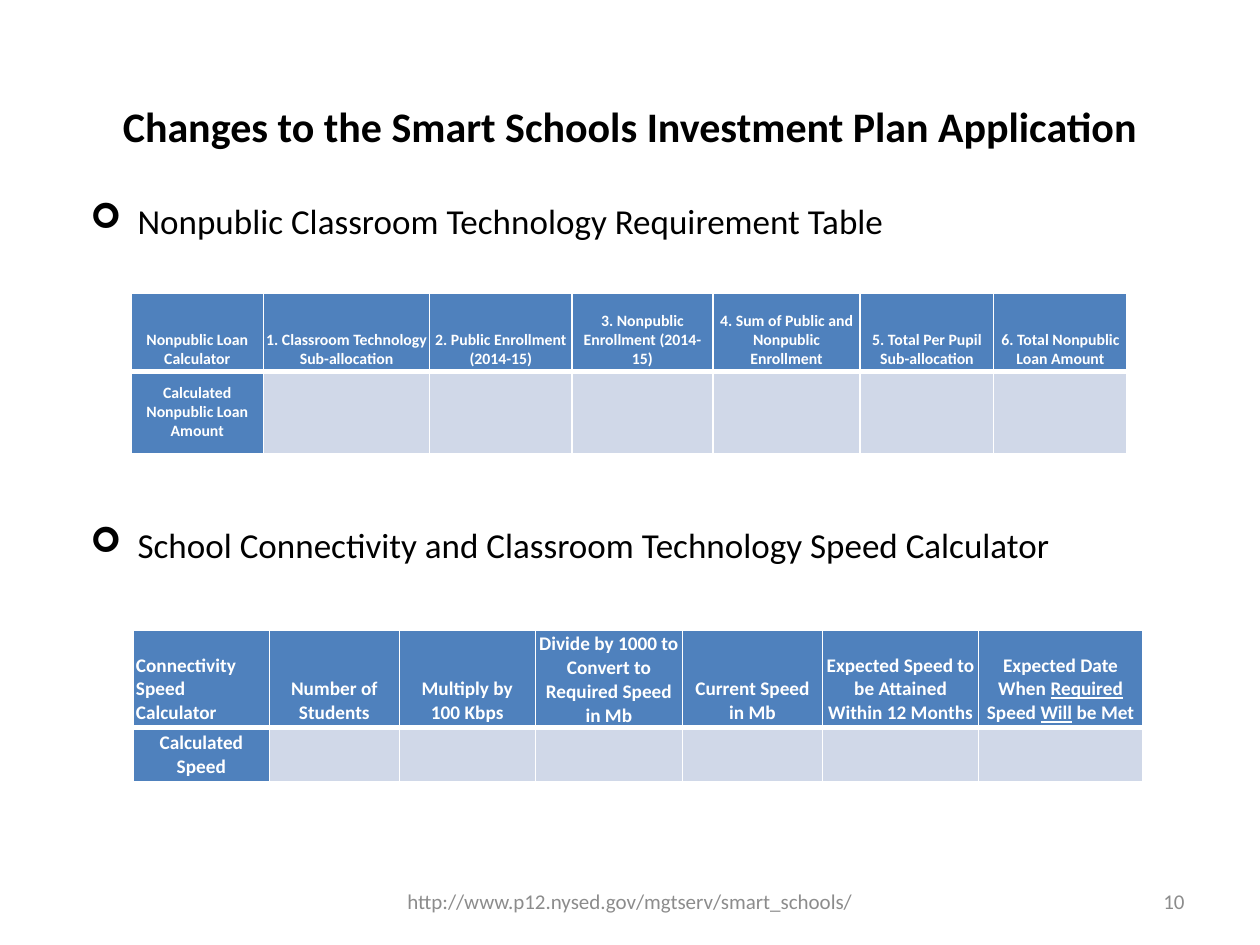
from lxml.etree import SubElement
from pptx import Presentation
from pptx.dml.color import RGBColor
from pptx.enum.text import MSO_ANCHOR, MSO_AUTO_SIZE, PP_ALIGN
from pptx.oxml.ns import qn
from pptx.util import Cm, Pt

FONT = "Calibri"
BLACK, WHITE, GREY = "000000", "FFFFFF", "8C8C8C"
BLUE, PALE_BLUE = "4F81BD", "D0D8E8"

LOAN_HEADINGS = [
    "Nonpublic Loan Calculator",
    "1. Classroom Technology Sub-allocation",
    "2. Public Enrollment (2014-15)",
    "3. Nonpublic Enrollment (2014-15)",
    "4. Sum of Public and Nonpublic Enrollment",
    "5. Total Per Pupil Sub-allocation",
    "6. Total Nonpublic Loan Amount",
]
# A line break starts a new paragraph; underscores enclose underlined words
SPEED_HEADINGS = [
    "Connectivity Speed Calculator",
    "Number of\nStudents",
    "Multiply by\n100 Kbps",
    "Divide by 1000 to Convert to Required Speed in Mb",
    "Current Speed\nin Mb",
    "Expected Speed to be Attained Within 12 Months",
    "Expected Date When _Required_ Speed _Will_ be Met",
]


def colour(value):
    return RGBColor.from_string(value)


def style(para, size, value, bold=False, align=PP_ALIGN.LEFT):
    para.alignment = align
    font = para.font
    font.name, font.size, font.bold = FONT, Pt(size), bold
    font.color.rgb = colour(value)


def place(shape, box):
    shape.left, shape.top, shape.width, shape.height = (Cm(n) for n in box)


def add_title(page, box, text):
    title = page.shapes.title
    place(title, box)
    frame = title.text_frame
    frame.text = text
    frame.auto_size = MSO_AUTO_SIZE.NONE
    frame.vertical_anchor = MSO_ANCHOR.MIDDLE
    style(frame.paragraphs[0], 24, BLACK, bold=True, align=PP_ALIGN.CENTER)


def add_list(page, box, items, gap):
    body = page.placeholders[1]
    place(body, box)
    frame = body.text_frame
    frame.text = "\n".join(items)
    frame.auto_size = MSO_AUTO_SIZE.NONE
    for index, para in enumerate(frame.paragraphs):
        para.space_before = Pt(gap if index else 0)
        props = para._p.get_or_add_pPr()
        props.set("marL", str(Cm(0.95)))
        props.set("indent", str(-Cm(0.95)))
        SubElement(props, qn("a:buFont"), typeface="Wingdings")
        SubElement(props, qn("a:buChar"), char="➢")
        style(para, 20, BLACK)


def add_borders(cell, **widths):
    props = cell._tc.get_or_add_tcPr()
    for side in "LRTB":
        line = SubElement(props, qn(f"a:ln{side}"), w=str(Pt(widths.get(side, 1))))
        fill = SubElement(line, qn("a:solidFill"))
        SubElement(fill, qn("a:srgbClr"), val=WHITE)


def fill_cell(cell, text, size, anchor, margin, align=PP_ALIGN.CENTER):
    cell.vertical_anchor = anchor
    cell.margin_left = cell.margin_right = Cm(margin)
    cell.margin_top = cell.margin_bottom = Cm(margin)
    frame = cell.text_frame
    for index, line in enumerate(text.split("\n")):
        para = frame.add_paragraph() if index else frame.paragraphs[0]
        style(para, size, WHITE, bold=True, align=align)
        for number, part in enumerate(line.split("_")):
            span = para.add_run()
            span.text = part
            if number % 2:
                span.font.underline = True


def add_calculator(page, left, top, widths, heights, headings, row_label, size,
                   corner_align=PP_ALIGN.CENTER):
    frame = page.shapes.add_table(2, len(widths), Cm(left), Cm(top),
                                  Cm(sum(widths)), Cm(sum(heights)))
    table = frame.table
    for row, height in zip(table.rows, heights):
        row.height = Cm(height)
    for index, (width, heading) in enumerate(zip(widths, headings)):
        table.columns[index].width = Cm(width)
        head, value = table.cell(0, index), table.cell(1, index)
        # Thick rule between the heading row and the values
        add_borders(head, B=3)
        add_borders(value, T=3)
        for cell, is_label in ((head, True), (value, index == 0)):
            cell.fill.solid()
            cell.fill.fore_color.rgb = colour(BLUE if is_label else PALE_BLUE)
        align = PP_ALIGN.CENTER if index else corner_align
        fill_cell(head, heading, size, MSO_ANCHOR.BOTTOM, 0.05, align)
    fill_cell(table.cell(1, 0), row_label, size, MSO_ANCHOR.MIDDLE, 0.08)


def add_footer_text(page, box, text, align):
    shape = page.shapes.add_textbox(*(Cm(n) for n in box))
    frame = shape.text_frame
    frame.text = text
    frame.word_wrap = True
    frame.vertical_anchor = MSO_ANCHOR.MIDDLE
    style(frame.paragraphs[0], 12, GREY, align=align)


def main():
    deck = Presentation()
    deck.slide_width, deck.slide_height = Cm(25.4), Cm(19.05)
    page = deck.slides.add_slide(deck.slide_layouts[1])

    # Title and the two list items, spaced to leave room for the first table
    add_title(page, (1.27, 1.9, 22.86, 1.27),
              "Changes to the Smart Schools Investment Plan Application")
    add_list(page, (1.57, 3.89, 22.23, 9.25),
             ["Nonpublic Classroom Technology Requirement Table",
              "School Connectivity and Classroom Technology Speed Calculator"],
             gap=161.3)

    # Footer address and page number
    add_footer_text(page, (7.9, 17.78, 9.6, 0.76),
                    "http://www.p12.nysed.gov/mgtserv/smart_schools/", PP_ALIGN.CENTER)
    add_footer_text(page, (18.2, 17.65, 5.93, 1.02), "10", PP_ALIGN.RIGHT)

    # Calculator tables
    add_calculator(page, 2.69, 12.7, [2.74, 2.62, 2.74, 2.97, 2.82, 3.15, 3.3],
                   [1.96, 1.09], SPEED_HEADINGS, "Calculated Speed", 11,
                   corner_align=PP_ALIGN.LEFT)
    add_calculator(page, 2.64, 5.92, [2.67, 3.35, 2.87, 2.84, 2.97, 2.69, 2.69],
                   [1.57, 1.65], LOAN_HEADINGS, "Calculated Nonpublic Loan Amount", 9)

    deck.save("out.pptx")


if __name__ == "__main__":
    main()
